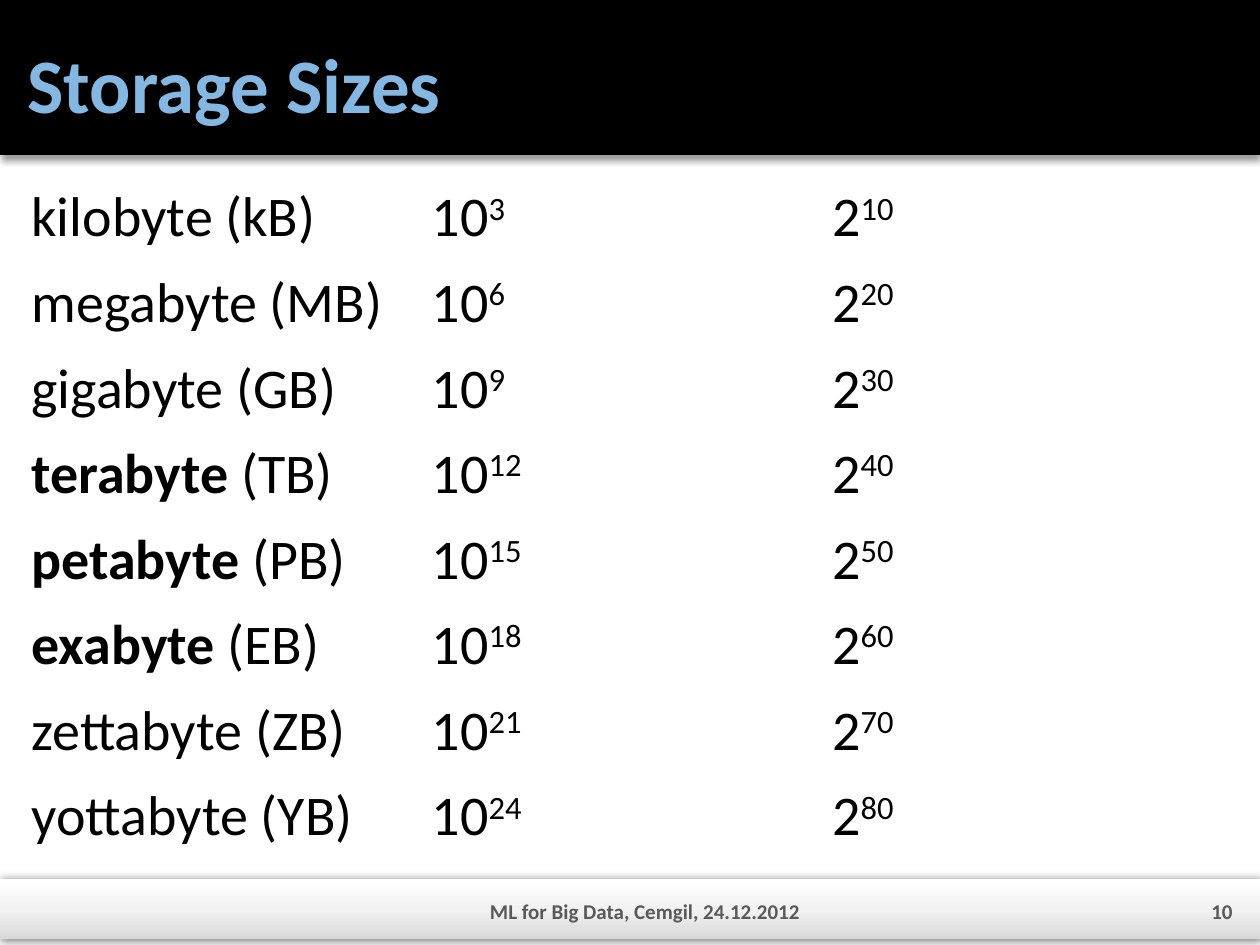
from copy import deepcopy
from dataclasses import dataclass

from lxml.etree import SubElement
from pptx import Presentation
from pptx.dml.color import RGBColor
from pptx.enum.shapes import MSO_SHAPE
from pptx.enum.text import MSO_ANCHOR, PP_ALIGN
from pptx.oxml.ns import qn
from pptx.util import Pt


@dataclass(frozen=True)
class Theme:
    """Colours, font and type sizes of the slide."""
    font: str = "Calibri"
    black: str = "000000"
    title: str = "84B8E2"
    footer: str = "595959"
    footer_stops: tuple = ("D9D9D9", "F2F2F2", "FFFFFF")
    title_size: int = 44
    body_size: int = 32
    footer_size: int = 12


THEME = Theme()
UNITS = [
    ("kilobyte", "kB"), ("megabyte", "MB"), ("gigabyte", "GB"),
    ("terabyte", "TB"), ("petabyte", "PB"), ("exabyte", "EB"),
    ("zettabyte", "ZB"), ("yottabyte", "YB"),
]
KEY_UNITS = {"terabyte", "petabyte", "exabyte"}


def add_run(p, text, *, size=THEME.body_size, color=THEME.black, bold=False, raised=False):
    """Append formatted text to a paragraph."""
    r = p.add_run()
    r.text = text
    r.font.name, r.font.size, r.font.bold = THEME.font, Pt(size), bold
    r.font.color.rgb = RGBColor.from_string(color)
    if raised:
        r.font._element.set("baseline", "30000")


def add_label(s, text, box, insets, align=PP_ALIGN.LEFT, **fmt):
    """Add a one-line, vertically centred text box."""
    tf = s.shapes.add_textbox(*map(Pt, box)).text_frame
    tf.word_wrap, tf.vertical_anchor = True, MSO_ANCHOR.MIDDLE
    tf.margin_left, tf.margin_top, tf.margin_right, tf.margin_bottom = map(Pt, insets)
    p = tf.paragraphs[0]
    p.alignment = align
    add_run(p, text, bold=True, **fmt)


def add_shadow(sp, alpha, blur, dist, angle):
    """Give a shape a soft black outer shadow."""
    effects = sp._element.spPr.find(qn("a:effectLst"))
    shadow = SubElement(effects, qn("a:outerShdw"), blurRad=str(Pt(blur)), dist=str(Pt(dist)),
                        dir=str(angle * 60000), algn="ctr", rotWithShape="0")
    color = SubElement(shadow, qn("a:srgbClr"), val=THEME.black)
    SubElement(color, qn("a:alpha"), val=str(alpha * 1000))


def add_band(s, top, height, shadow):
    """Add a full-width shadowed rectangle."""
    sp = s.shapes.add_shape(MSO_SHAPE.RECTANGLE, 0, Pt(top), Pt(720), Pt(height))
    sp.line.fill.background()
    sp.shadow.inherit = False
    add_shadow(sp, *shadow)
    return sp


def fill_gradient(sp, colors):
    """Fill a shape with evenly spaced colours from bottom to top."""
    sp.fill.gradient()
    sp.fill.gradient_angle = 90
    stops = sp._element.spPr.find(qn("a:gradFill")).find(qn("a:gsLst"))
    while len(stops) < len(colors):
        stops.append(deepcopy(stops[0]))
    for i, (stop, color) in enumerate(zip(sp.fill.gradient_stops, colors)):
        stop.position = i / (len(colors) - 1)
        stop.color.rgb = RGBColor.from_string(color)


def open_cell(cell):
    """Clear a cell's fill, set its margins and return its paragraph."""
    cell.fill.background()
    cell.vertical_anchor = MSO_ANCHOR.MIDDLE
    cell.margin_left = cell.margin_right = Pt(3.6)
    cell.margin_top = cell.margin_bottom = Pt(1.5)
    return cell.text_frame.paragraphs[0]


def add_sizes_table(s):
    """Add the table of units with their decimal and binary powers."""
    table = s.shapes.add_table(len(UNITS), 3, Pt(14.4), Pt(100), Pt(686.4), Pt(391.2)).table
    table.first_row = table.horz_banding = False
    for i, (name, symbol) in enumerate(UNITS):
        unit, decimal, binary = map(open_cell, table.rows[i].cells)
        if name in KEY_UNITS:
            add_run(unit, name, bold=True)
            add_run(unit, f" ({symbol})")
        else:
            add_run(unit, f"{name} ({symbol})")
        for p, base, power in ((decimal, "10", 3 * (i + 1)), (binary, "2", 10 * (i + 1))):
            add_run(p, base)
            add_run(p, str(power), raised=True)


def main():
    """Build and save the slide."""
    prs = Presentation()
    prs.slide_width, prs.slide_height = Pt(720), Pt(540)
    s = prs.slides.add_slide(prs.slide_layouts[6])
    header = add_band(s, 0, 88.5, (40, 4, 3, 90))
    header.fill.solid()
    header.fill.fore_color.rgb = RGBColor.from_string(THEME.black)
    fill_gradient(add_band(s, 502.5, 34, (50, 5, 0, 0)), THEME.footer_stops)
    add_label(s, "Storage Sizes", (8.6, 12.2, 702.8, 70.6), (7.2, 3.6, 3.6, 3.6),
              size=THEME.title_size, color=THEME.title)
    footer = {"size": THEME.footer_size, "color": THEME.footer}
    add_label(s, "ML for Big Data, Cemgil, 24.12.2012", (87.8, 508.3, 561.6, 21.6),
              (3.6, 3.6, 3.6, 0), PP_ALIGN.CENTER, **footer)
    add_label(s, "10", (653.8, 508.3, 57.6, 21.6), (7.2, 3.6, 7.2, 0), PP_ALIGN.RIGHT, **footer)
    add_sizes_table(s)
    prs.save("out.pptx")


if __name__ == "__main__":
    main()
